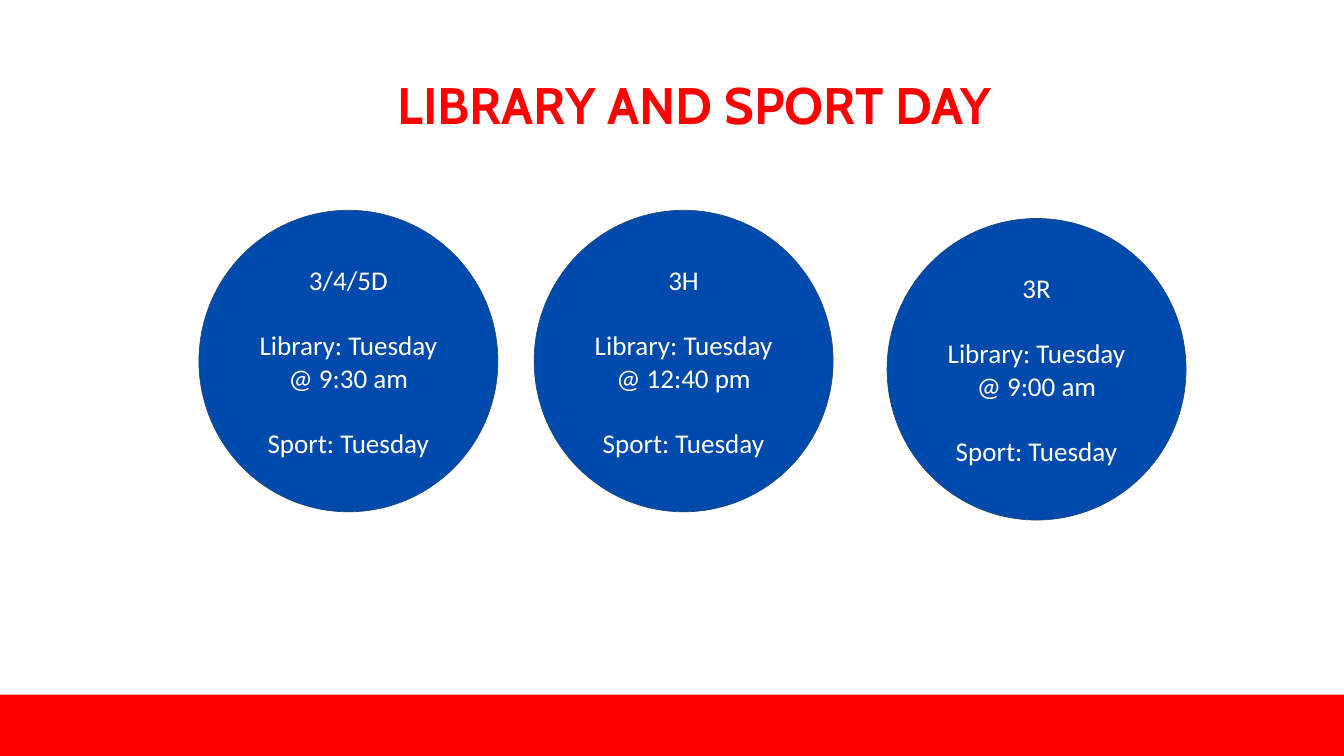
"""Build the library and sport day slide with one circle per class."""
from pptx import Presentation
from pptx.dml.color import RGBColor
from pptx.enum.shapes import MSO_SHAPE
from pptx.enum.text import MSO_ANCHOR, PP_ALIGN
from pptx.util import Cm, Pt

OVAL = MSO_SHAPE.OVAL
RECTANGLE = MSO_SHAPE.RECTANGLE
CENTER = PP_ALIGN.CENTER
MIDDLE = MSO_ANCHOR.MIDDLE
TOP = MSO_ANCHOR.TOP

RED = "FF0000"
BLUE = "004AAC"
OUTLINE = "1F497D"
WHITE = "FFFFFF"


def color(value):
    return RGBColor.from_string(value)


def add_line(para, text, font, size, fill, bold=False):
    para.alignment = CENTER
    span = para.add_run()
    span.text = text
    span.font.name = font
    span.font.size = Pt(size)
    span.font.bold = bold
    span.font.color.rgb = color(fill)


deck = Presentation()
deck.slide_width = Cm(50.8)
deck.slide_height = Cm(28.58)
page = deck.slides.add_slide(deck.slide_layouts[6])

title = page.shapes.add_textbox(Cm(3.18), Cm(2.74), Cm(46.13), Cm(2.39))
title_frame = title.text_frame
title_frame.word_wrap = True
title_frame.vertical_anchor = TOP
title_frame.margin_left = title_frame.margin_right = title_frame.margin_bottom = 0
title_frame.margin_top = Cm(0.03)
add_line(title_frame.paragraphs[0], "LIBRARY AND SPORT DAY", "Cabin", 55, RED, True)

band_top = Cm(26.26)
band = page.shapes.add_shape(
    RECTANGLE, 0, band_top, deck.slide_width, deck.slide_height - band_top
)
band.shadow.inherit = False
band.fill.solid()
band.fill.fore_color.rgb = color(RED)
band.line.fill.background()

classes = [
    ("3/4/5D", "9:30 am", 7.52, 7.95),
    ("3H", "12:40 pm", 20.19, 7.95),
    ("3R", "9:00 am", 33.53, 8.26),
]
for name, time, left, top in classes:
    circle = page.shapes.add_shape(OVAL, Cm(left), Cm(top), Cm(11.3), Cm(11.4))
    circle.shadow.inherit = False
    circle.fill.solid()
    circle.fill.fore_color.rgb = color(BLUE)
    circle.line.color.rgb = color(OUTLINE)
    circle.line.width = Pt(0.75)
    frame = circle.text_frame
    frame.word_wrap = True
    frame.vertical_anchor = MIDDLE
    frame.margin_left = frame.margin_right = Cm(0.25)
    frame.margin_top = frame.margin_bottom = Cm(0.25)
    lines = [name, f"Library: Tuesday @ {time}", "Sport: Tuesday"]
    for index, text in enumerate(lines):
        para = frame.add_paragraph() if index else frame.paragraphs[0]
        para.space_before = Pt(35 if index else 0)
        add_line(para, text, "Calibri", 29, WHITE)

deck.save("out.pptx")
